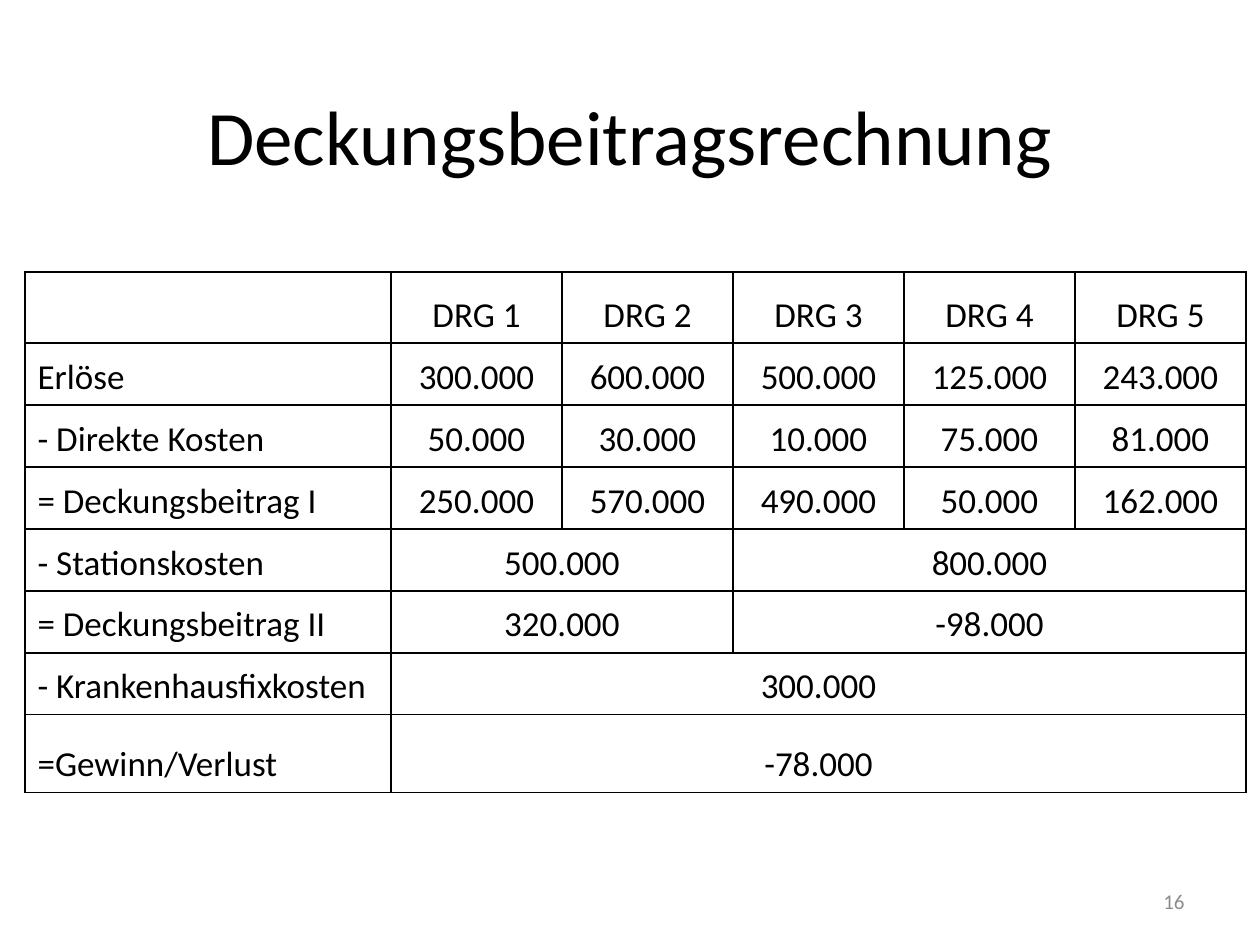
"""Build the contribution margin slide."""
from dataclasses import dataclass

from lxml.etree import SubElement
from pptx import Presentation
from pptx.dml.color import RGBColor
from pptx.enum.text import MSO_ANCHOR, PP_ALIGN
from pptx.oxml.ns import qn
from pptx.util import Emu, Pt

FONT = "Calibri"
BLACK = "000000"
GRAY = "8C8C8C"
LABEL_WIDTH = 366
VALUE_WIDTH = 171
VALUE_COLUMNS = 5


@dataclass(frozen=True)
class Row:
    """One table row: its label, its values and the columns each value spans."""
    label: str
    values: tuple[str, ...]
    spans: tuple[int, ...] = (1,) * VALUE_COLUMNS
    height: int = 62


ROWS = (
    Row("", tuple(f"DRG {number}" for number in range(1, VALUE_COLUMNS + 1)), height=71),
    Row("Erlöse", ("300.000", "600.000", "500.000", "125.000", "243.000")),
    Row("- Direkte Kosten", ("50.000", "30.000", "10.000", "75.000", "81.000")),
    Row("= Deckungsbeitrag I", ("250.000", "570.000", "490.000", "50.000", "162.000")),
    Row("- Stationskosten", ("500.000", "800.000"), (2, 3)),
    Row("= Deckungsbeitrag II", ("320.000", "-98.000"), (2, 3)),
    Row("- Krankenhausfixkosten", ("300.000",), (5,)),
    Row("=Gewinn/Verlust", ("-78.000",), (5,), 78),
)


def px(length: int) -> Emu:
    """Turn pixels into EMU."""
    return Emu(round(length * 914400 / 126))


def color(value: str) -> RGBColor:
    """Turn a hex string into a colour."""
    return RGBColor.from_string(value)


def write(frame, text: str, size: int, align: PP_ALIGN, ink: str = BLACK):
    """Write one formatted paragraph and return it."""
    frame.text = text
    para = frame.paragraphs[0]
    para.alignment = align
    para.font.name = FONT
    para.font.size = Pt(size)
    para.font.color.rgb = color(ink)
    return para


def set_borders(cell) -> None:
    """Give a cell a thin black border on each side."""
    properties = cell._tc.get_or_add_tcPr()
    for side in ("a:lnL", "a:lnR", "a:lnT", "a:lnB"):
        line = SubElement(properties, qn(side), w=str(Pt(1)))
        fill = SubElement(line, qn("a:solidFill"))
        SubElement(fill, qn("a:srgbClr"), val=BLACK)


def fill_cell(cell, text: str, align: PP_ALIGN) -> None:
    """Write text at the bottom of a cell."""
    cell.vertical_anchor = MSO_ANCHOR.BOTTOM
    if text:
        para = write(cell.text_frame, text, 20, align)
        para.line_spacing = 1.07
        para.space_after = Pt(8)


def add_margin_table(page, left: int, top: int) -> None:
    """Add the table with its merged cost cells."""
    width = LABEL_WIDTH + VALUE_COLUMNS * VALUE_WIDTH
    height = sum(row.height for row in ROWS)
    table = page.shapes.add_table(
        len(ROWS), VALUE_COLUMNS + 1, px(left), px(top), px(width), px(height)
    ).table
    table.first_row = table.horz_banding = False
    for index, column in enumerate(table.columns):
        column.width = px(VALUE_WIDTH if index else LABEL_WIDTH)
    for cell in table.iter_cells():
        set_borders(cell)
        cell.fill.background()
    for index, row in enumerate(ROWS):
        table.rows[index].height = px(row.height)
        fill_cell(table.cell(index, 0), row.label, PP_ALIGN.LEFT)
        column = 1
        for value, span in zip(row.values, row.spans):
            cell = table.cell(index, column)
            if span > 1:
                cell.merge(table.cell(index, column + span - 1))
            fill_cell(cell, value, PP_ALIGN.CENTER)
            column += span


def main() -> None:
    """Build and save the deck."""
    deck = Presentation()
    deck.slide_width, deck.slide_height = px(1260), px(945)
    page = deck.slides.add_slide(deck.slide_layouts[5])
    title = page.shapes.title
    title.left, title.top, title.width, title.height = px(63), px(40), px(1134), px(190)
    title.text_frame.vertical_anchor = MSO_ANCHOR.MIDDLE
    write(title.text_frame, "Deckungsbeitragsrechnung", 44, PP_ALIGN.CENTER)
    add_margin_table(page, 25, 272)
    box = page.shapes.add_textbox(px(903), px(876), px(294), px(50))
    box.text_frame.word_wrap = True
    box.text_frame.vertical_anchor = MSO_ANCHOR.MIDDLE
    write(box.text_frame, "16", 12, PP_ALIGN.RIGHT, GRAY)
    deck.save("out.pptx")


if __name__ == "__main__":
    main()
